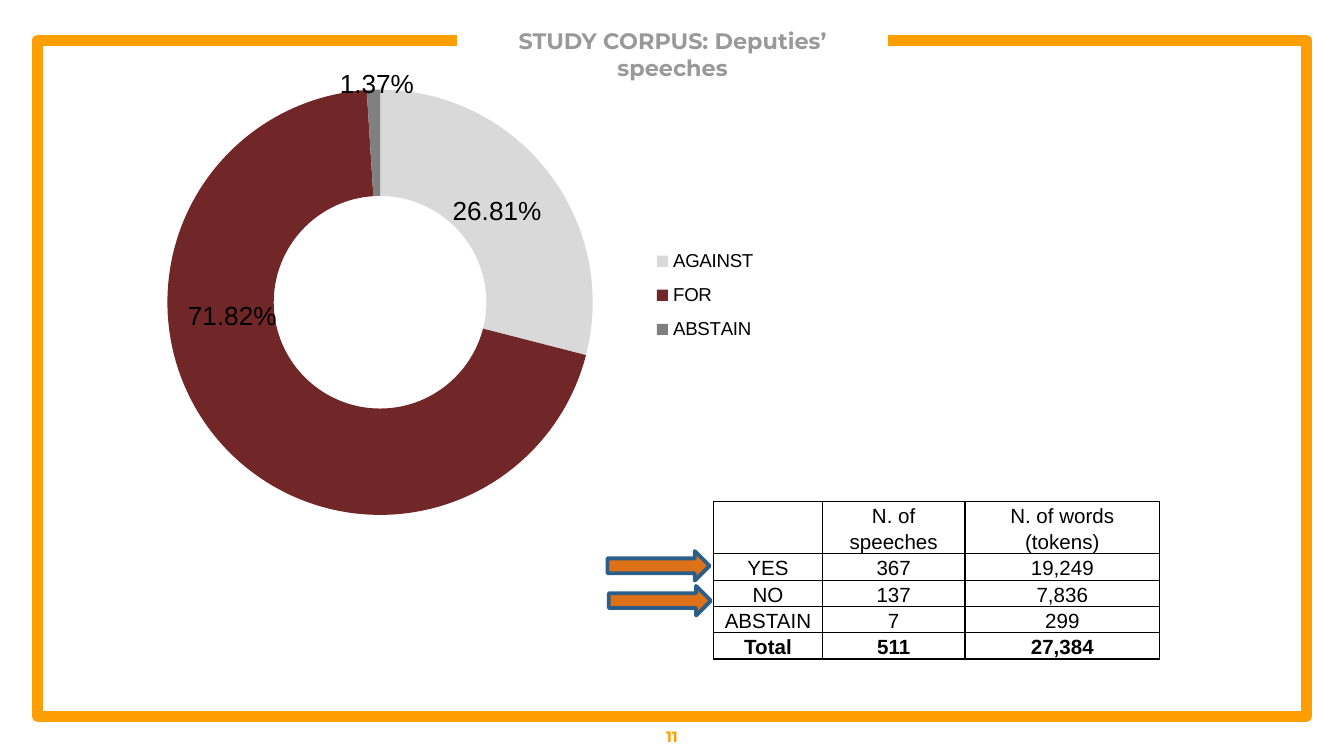
"""Build the study corpus slide: a doughnut of votes and a table of speeches."""
from dataclasses import dataclass

from lxml import etree
from pptx import Presentation, util as u
from pptx.chart.data import CategoryChartData
from pptx.dml.color import RGBColor
from pptx.enum import chart as charts, shapes, text
from pptx.oxml import parse_xml
from pptx.oxml.ns import nsdecls, qn


@dataclass(frozen=True)
class Theme:
    accent: str = "FF9E00"
    muted: str = "999999"
    ink: str = "000000"
    arrow: str = "DD7117"
    arrow_edge: str = "2B5F8A"
    slices: tuple = ("D9D9D9", "712627", "808080")
    heading: str = "Montserrat"
    body: str = "Arial"
    title_size: int = 12
    number_size: int = 8
    label_size: int = 14
    table_size: int = 11
    legend_size: int = 10


@dataclass(frozen=True)
class Area:
    left: float
    top: float
    width: float
    height: float

    def lengths(self) -> tuple:
        return tuple(u.Inches(n) for n in (self.left, self.top, self.width, self.height))


@dataclass(frozen=True)
class Label:
    words: str
    area: Area
    size: int
    face: str
    color: str
    bold: bool = False
    wrap: bool = True
    align: text.PP_ALIGN = text.PP_ALIGN.CENTER
    anchor: text.MSO_ANCHOR = text.MSO_ANCHOR.TOP


THEME = Theme()


def percent(words: str, left: float, top: float, width: float) -> Label:
    return Label(words, Area(left, top, width, 0.34), THEME.label_size, THEME.body,
                 THEME.ink, wrap=False, align=text.PP_ALIGN.LEFT)


LABELS = (
    Label("STUDY CORPUS: Deputies’ speeches", Area(3.55, 0.1, 2.91, 0.8),
          THEME.title_size, THEME.heading, THEME.muted, bold=True),
    Label("11", Area(0, 5.33, 10, 0.3), THEME.number_size, THEME.heading,
          THEME.accent, bold=True, anchor=text.MSO_ANCHOR.MIDDLE),
    percent("71.82%", 1.3, 2.18, 0.87),
    percent("26.81%", 3.27, 1.4, 0.87),
    percent("1.37%", 2.43, 0.45, 0.76),
)
SLIDE_WIDTH = 10
VOTES = {"AGAINST": 29, "FOR": 70, "ABSTAIN": 1}
ROWS = (
    ("", "N. of speeches", "N. of words (tokens)"),
    ("YES", "367", "19,249"),
    ("NO", "137", "7,836"),
    ("ABSTAIN", "7", "299"),
    ("Total", "511", "27,384"),
)
COLUMN_WIDTHS = (0.81, 1.06, 1.45)
ROW_HEIGHTS = (0.39,) + (0.19,) * 4
FRAME = ((3.4, 0.3), (0.28, 0.3), (0.28, 5.33), (9.72, 5.33), (9.72, 0.3), (6.61, 0.3))
ARROWS = (Area(4.52, 4.1, 0.76, 0.22), Area(4.53, 4.36, 0.76, 0.22))


def apply(target, values: dict) -> None:
    for name, value in values.items():
        setattr(target, name, value)


def style_font(font, size: int, face: str, color: str, bold: bool = False) -> None:
    apply(font, {"size": u.Pt(size), "name": face, "bold": bold})
    font.color.rgb = RGBColor.from_string(color)


def style_line(line, color: str, width: float) -> None:
    line.color.rgb = RGBColor.from_string(color)
    line.width = u.Pt(width)


def draw_frame(page) -> None:
    start, *corners = [(u.Inches(x), u.Inches(y)) for x, y in FRAME]
    builder = page.shapes.build_freeform(*start)
    builder.add_line_segments(corners, close=False)
    frame = builder.convert_to_shape()
    frame.shadow.inherit = False
    frame.fill.background()
    style_line(frame.line, THEME.accent, 6)


def draw_label(page, label: Label) -> None:
    frame = page.shapes.add_textbox(*label.area.lengths()).text_frame
    inset = u.Inches(0.1)
    apply(frame, {"word_wrap": label.wrap, "vertical_anchor": label.anchor,
                  "margin_left": inset, "margin_right": inset})
    if label.wrap:
        apply(frame, {"margin_top": inset, "margin_bottom": inset})
    para = frame.paragraphs[0]
    para.alignment = label.align
    span = para.add_run()
    span.text = label.words
    style_font(span.font, label.size, label.face, label.color, label.bold)


def place(element, area: Area, inner: bool = False) -> None:
    for old in element.findall(qn("c:layout")):
        element.remove(old)
    layout = parse_xml(f"<c:layout {nsdecls('c')}><c:manualLayout/></c:layout>")
    values = {"layoutTarget": "inner"} if inner else {}
    values |= {"xMode": "edge", "yMode": "edge", "x": area.left, "y": area.top,
               "w": area.width, "h": area.height}
    for name, value in values.items():
        etree.SubElement(layout[0], qn(f"c:{name}")).set("val", str(value))
    element.insert(0 if inner else 1, layout)


def draw_chart(page, area: Area) -> None:
    data = CategoryChartData()
    data.categories = list(VOTES)
    data.add_series("Series 1", VOTES.values())
    chart = page.shapes.add_chart(
        charts.XL_CHART_TYPE.DOUGHNUT, *area.lengths(), data).chart
    apply(chart, {"has_title": False, "has_legend": True})
    style_font(chart.font, THEME.legend_size, THEME.body, THEME.ink)
    apply(chart.legend, {"position": charts.XL_LEGEND_POSITION.RIGHT,
                         "include_in_layout": False})
    plot = chart.plots[0]
    plot.vary_by_categories = True
    for index, color in enumerate(THEME.slices):
        fill = plot.series[0].points[index].format.fill
        fill.solid()
        fill.fore_color.rgb = RGBColor.from_string(color)
    plot_area = chart.element.find(f".//{qn('c:plotArea')}")
    plot_area.find(f".//{qn('c:holeSize')}").set("val", "50")
    place(plot_area, Area(0.11, 0.04, 0.61, 0.92), inner=True)
    place(chart.element.find(f".//{qn('c:legend')}"), Area(0.8, 0.36, 0.16, 0.25))


def border_cell(cell) -> None:
    properties = cell._tc.get_or_add_tcPr()
    for side in ("lnL", "lnR", "lnT", "lnB"):
        properties.append(parse_xml(
            f'<a:{side} {nsdecls("a")} w="{u.Pt(0.75)}"><a:solidFill>'
            f'<a:srgbClr val="{THEME.ink}"/></a:solidFill></a:{side}>'))


def fill_cell(cell, words: str, bold: bool) -> None:
    border_cell(cell)
    cell.fill.background()
    side = u.Inches(0.07)
    apply(cell, {"margin_left": side, "margin_right": side,
                 "margin_top": 0, "margin_bottom": 0})
    para = cell.text_frame.paragraphs[0]
    apply(para, {"alignment": text.PP_ALIGN.CENTER, "line_spacing": 1.15})
    if words:
        span = para.add_run()
        span.text = words
        style_font(span.font, THEME.table_size, THEME.body, THEME.ink, bold)


def draw_table(page, left: float, top: float) -> None:
    area = Area(left, top, sum(COLUMN_WIDTHS), sum(ROW_HEIGHTS))
    table = page.shapes.add_table(len(ROWS), len(COLUMN_WIDTHS), *area.lengths()).table
    apply(table, {"first_row": False, "horz_banding": False})
    for column, width in zip(table.columns, COLUMN_WIDTHS):
        column.width = u.Inches(width)
    for row, height, entries in zip(table.rows, ROW_HEIGHTS, ROWS):
        row.height = u.Inches(height)
        for cell, words in zip(row.cells, entries):
            fill_cell(cell, words, bold=entries[0] == "Total")


def draw_arrow(page, area: Area) -> None:
    arrow = page.shapes.add_shape(shapes.MSO_SHAPE.RIGHT_ARROW, *area.lengths())
    arrow.shadow.inherit = False
    arrow.fill.solid()
    arrow.fill.fore_color.rgb = RGBColor.from_string(THEME.arrow)
    style_line(arrow.line, THEME.arrow_edge, 2)


def main() -> None:
    deck = Presentation()
    apply(deck, {"slide_width": u.Inches(SLIDE_WIDTH),
                 "slide_height": u.Inches(SLIDE_WIDTH * 9 / 16)})
    page = deck.slides.add_slide(deck.slide_layouts[6])
    draw_frame(page)
    draw_chart(page, Area(0.67, 0.53, 5.2, 3.44))
    draw_table(page, 5.31, 3.73)
    for label in LABELS:
        draw_label(page, label)
    for area in ARROWS:
        draw_arrow(page, area)
    deck.save("out.pptx")


if __name__ == "__main__":
    main()
